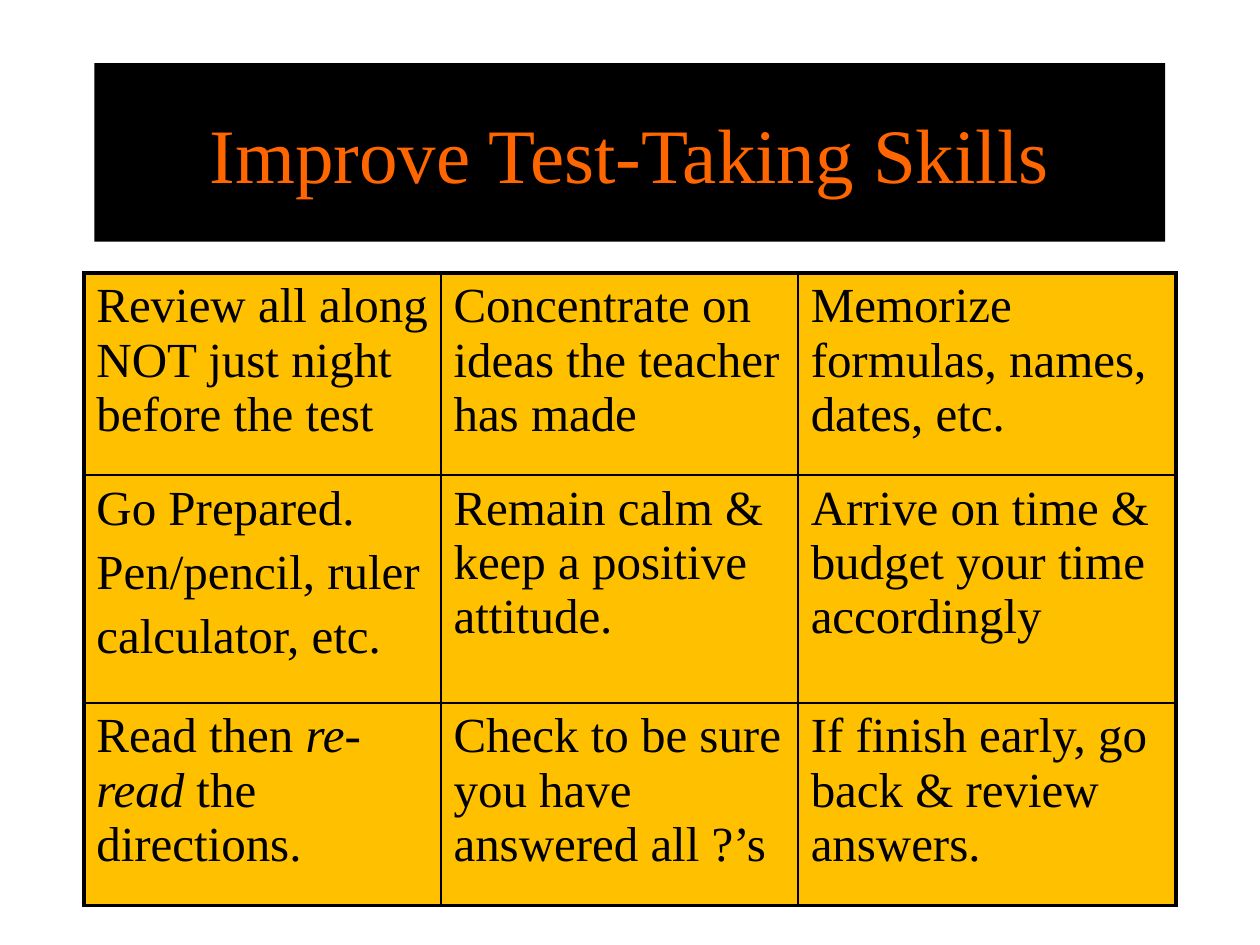
from lxml import etree
from pptx import Presentation
from pptx.dml.color import RGBColor
from pptx.enum.text import MSO_ANCHOR, PP_ALIGN
from pptx.oxml.ns import qn
from pptx.util import Cm, Pt

CENTER = PP_ALIGN.CENTER
MIDDLE = MSO_ANCHOR.MIDDLE
TITLE_ONLY = 5

BLACK, ORANGE, GOLD = "000000", "FF6600", "FFC000"
THICK, THIN = 2.25, 1

# Each cell is a list of paragraphs
TIPS = [
    [["Review all along NOT just night before the test"],
     ["Concentrate on ideas the teacher has made"],
     ["Memorize formulas, names, dates, etc."]],
    [["Go Prepared.", "Pen/pencil, ruler", "calculator, etc."],
     ["Remain calm & keep a positive attitude."],
     ["Arrive on time & budget your time accordingly"]],
    [[("Read then", " re-read", " the directions.")],
     ["Check to be sure you have answered all ?’s"],
     ["If finish early, go back & review answers."]],
]


def color(code):
    return RGBColor.from_string(code)


class Deck:
    font = "Times New Roman"
    head_size = 44
    cell_size = 28

    def __init__(self, prs):
        self.slide = prs.slides.add_slide(prs.slide_layouts[TITLE_ONLY])

    def style(self, run, size, code):
        run.font.name = self.font
        run.font.size = Pt(size)
        run.font.color.rgb = color(code)

    def title(self, text, left, top, width, height):
        shape = self.slide.shapes.title
        shape.left, shape.top = Cm(left), Cm(top)
        shape.width, shape.height = Cm(width), Cm(height)
        shape.fill.solid()
        shape.fill.fore_color.rgb = color(BLACK)
        frame = shape.text_frame
        frame.text = text
        frame.vertical_anchor = MIDDLE
        para = frame.paragraphs[0]
        para.alignment = CENTER
        self.style(para.runs[0], self.head_size, ORANGE)

    def border(self, cell, widths):
        props = cell._tc.get_or_add_tcPr()
        for i, (side, width) in enumerate(widths.items()):
            line = etree.Element(qn("a:ln" + side), w=str(Pt(width)))
            fill = etree.SubElement(line, qn("a:solidFill"))
            etree.SubElement(fill, qn("a:srgbClr"), val=BLACK)
            props.insert(i, line)

    def fill_cell(self, cell, paras):
        cell.fill.solid()
        cell.fill.fore_color.rgb = color(GOLD)
        frame = cell.text_frame
        for i, parts in enumerate(paras):
            para = frame.add_paragraph() if i else frame.paragraphs[0]
            if i:
                para.space_before = Pt(0.2 * self.cell_size)
            if isinstance(parts, str):
                parts = (parts,)
            for j, part in enumerate(parts):
                run = para.add_run()
                run.text = part
                self.style(run, self.cell_size, BLACK)
                if j == 1:  # the middle part is stressed
                    run.font.italic = True

    def table(self, rows, left, top, widths, heights):
        last_row, last_col = len(heights) - 1, len(widths) - 1
        grid = self.slide.shapes.add_table(
            len(heights), len(widths), Cm(left), Cm(top),
            Cm(sum(widths)), Cm(sum(heights))).table
        grid.first_row = grid.horz_banding = False
        for col, width in zip(grid.columns, widths):
            col.width = Cm(width)
        for row, height in zip(grid.rows, heights):
            row.height = Cm(height)
        for r, row in enumerate(rows):
            for c, paras in enumerate(row):
                cell = grid.cell(r, c)
                self.fill_cell(cell, paras)
                # Thick lines on the outer edge only
                self.border(cell, {
                    "L": THICK if c == 0 else THIN,
                    "R": THICK if c == last_col else THIN,
                    "T": THICK if r == 0 else THIN,
                    "B": THICK if r == last_row else THIN,
                })


def main():
    prs = Presentation()
    prs.slide_width, prs.slide_height = Cm(25.4), Cm(19.05)
    deck = Deck(prs)

    # Heading
    deck.title("Improve Test-Taking Skills", 1.9, 1.27, 21.59, 3.6)

    # Grid of tips
    deck.table(TIPS, 1.69, 5.5, [7.2, 7.2, 7.62], [4.08, 4.59, 4.08])

    prs.save("out.pptx")


if __name__ == "__main__":
    main()
